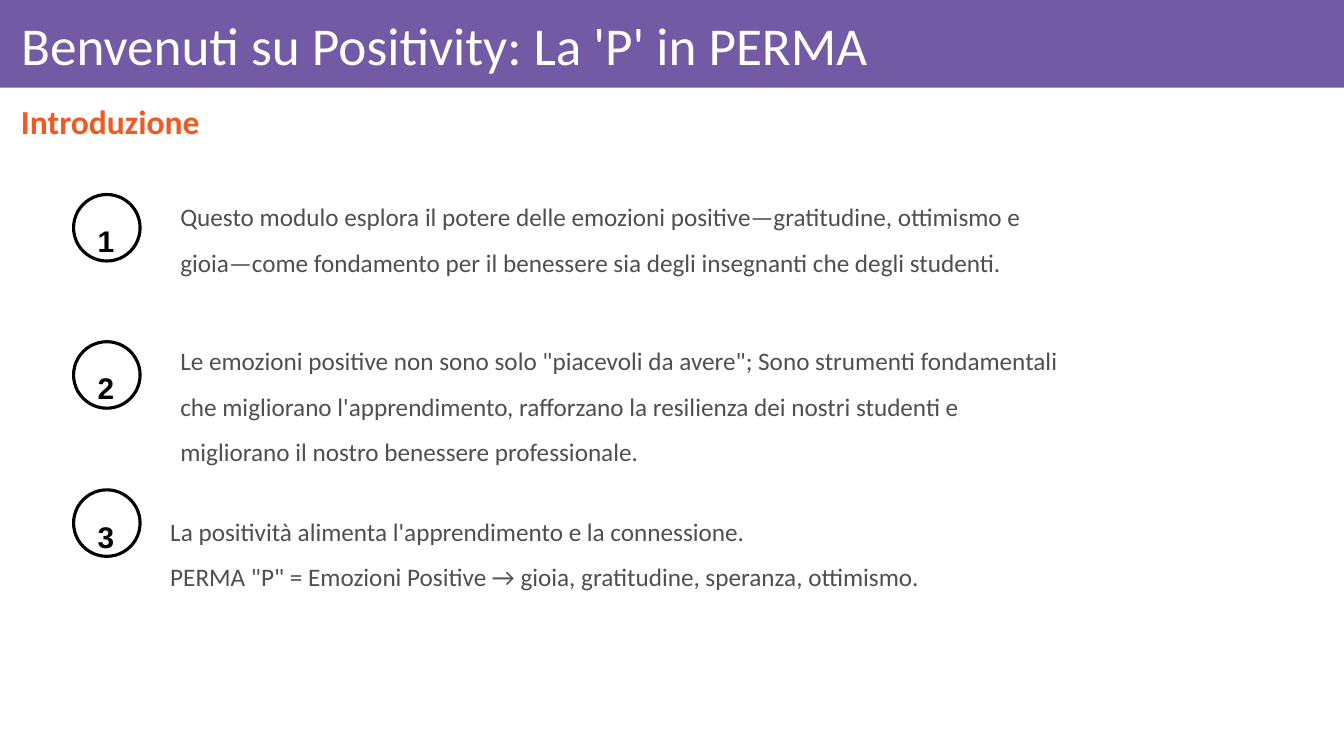
from dataclasses import dataclass

from pptx import Presentation
from pptx.dml.color import RGBColor
from pptx.enum.shapes import MSO_SHAPE
from pptx.enum.text import MSO_ANCHOR, MSO_AUTO_SIZE, PP_ALIGN
from pptx.shapes.autoshape import Shape
from pptx.slide import Slide
from pptx.util import Emu, Pt

PX = 9144
INK = {"bar": "735AA5", "head": "F05A22", "body": "4F4F50",
       "white": "FFFFFF", "black": "000000"}


@dataclass
class Style:
    """Look of a block of text."""
    size: float
    ink: str
    font: str = "Calibri"
    bold: bool = False
    align: PP_ALIGN = PP_ALIGN.LEFT
    space: float = 1.0
    anchor: MSO_ANCHOR = MSO_ANCHOR.TOP
    inset: tuple[int, int, int, int] = (10, 5, 10, 5)


@dataclass
class Point:
    """Numbered point with the place of its text."""
    text: str
    left: int
    top: int
    high: int


TITLE = Style(38, "white", space=0.9, anchor=MSO_ANCHOR.MIDDLE, inset=(10, 6, 6, 6))
HEAD = Style(24, "head", bold=True, align=PP_ALIGN.JUSTIFY, space=0.9,
             anchor=MSO_ANCHOR.MIDDLE)
BODY = Style(18, "body", space=1.5)
DIGIT = Style(21.3, "black", "Arial", True, PP_ALIGN.CENTER, 1.6, inset=(0, 0, 0, 0))

POINTS = [
    Point("Questo modulo esplora il potere delle emozioni positive—gratitudine, "
          "ottimismo e gioia—come fondamento per il benessere sia degli insegnanti "
          "che degli studenti.", 169, 180, 127),
    Point("Le emozioni positive non sono solo \"piacevoli da avere\"; Sono strumenti "
          "fondamentali che migliorano l'apprendimento, rafforzano la resilienza dei "
          "nostri studenti e migliorano il nostro benessere professionale.",
          169, 323, 146),
    Point("La positività alimenta l'apprendimento e la connessione.\v"
          "PERMA \"P\" = Emozioni Positive → gioia, gratitudine, speranza, ottimismo.",
          159, 492, 101),
]


def tint(name: str) -> RGBColor:
    """Return a named colour."""
    return RGBColor.from_string(INK[name])


def place(shape: Shape, x: int, y: int, w: int, h: int) -> None:
    """Put a shape at a box given in px."""
    shape.left, shape.top, shape.width, shape.height = (Emu(n * PX) for n in (x, y, w, h))


def write(shape: Shape, text: str, style: Style) -> None:
    """Fill a shape with styled text."""
    frame = shape.text_frame
    frame.text = text
    frame.word_wrap = True
    frame.auto_size = MSO_AUTO_SIZE.NONE
    frame.vertical_anchor = style.anchor
    (frame.margin_left, frame.margin_top,
     frame.margin_right, frame.margin_bottom) = (Emu(n * PX) for n in style.inset)
    for para in frame.paragraphs:
        para.alignment = style.align
        para.line_spacing = style.space
        for run in para.runs:
            run.font.name = style.font
            run.font.size = Pt(style.size)
            run.font.bold = style.bold
            run.font.color.rgb = tint(style.ink)


def label(slide: Slide, text: str, style: Style, x: int, y: int, w: int, h: int) -> None:
    """Add a text box."""
    box = slide.shapes.add_textbox(0, 0, 0, 0)
    place(box, x, y, w, h)
    write(box, text, style)


def banner(slide: Slide) -> None:
    """Set the title over its coloured bar."""
    title = slide.shapes.title
    place(title, 11, 9, 1306, 78)
    write(title, "Benvenuti su Positivity: La 'P' in PERMA", TITLE)
    bar = slide.shapes.add_shape(MSO_SHAPE.RECTANGLE, 0, 0, 0, 0)
    place(bar, 0, 0, 1333, 87)
    bar.shadow.inherit = False
    bar.fill.solid()
    bar.fill.fore_color.rgb = tint("bar")
    bar.line.fill.background()
    title.element.addprevious(bar.element)


def badge(slide: Slide, num: int, top: int) -> None:
    """Draw a ring with its number."""
    ring = slide.shapes.add_shape(MSO_SHAPE.OVAL, 0, 0, 0, 0)
    place(ring, 73, top, 66, 66)
    ring.shadow.inherit = False
    ring.fill.background()
    ring.line.color.rgb = tint("black")
    ring.line.width = Pt(2.25)
    label(slide, str(num), DIGIT, 75, top + 7, 60, 44)


def main() -> None:
    """Build and save the slide."""
    deck = Presentation()
    deck.slide_width, deck.slide_height = Emu(1333 * PX), Emu(750 * PX)
    slide = deck.slides.add_slide(deck.slide_layouts[5])
    banner(slide)
    label(slide, "Introduzione", HEAD, 11, 93, 1306, 60)
    for i, point in enumerate(POINTS):
        badge(slide, i + 1, 193 + i * 293 // 2)
        label(slide, point.text, BODY, point.left, point.top, 900, point.high)
    deck.save("out.pptx")


if __name__ == "__main__":
    main()
